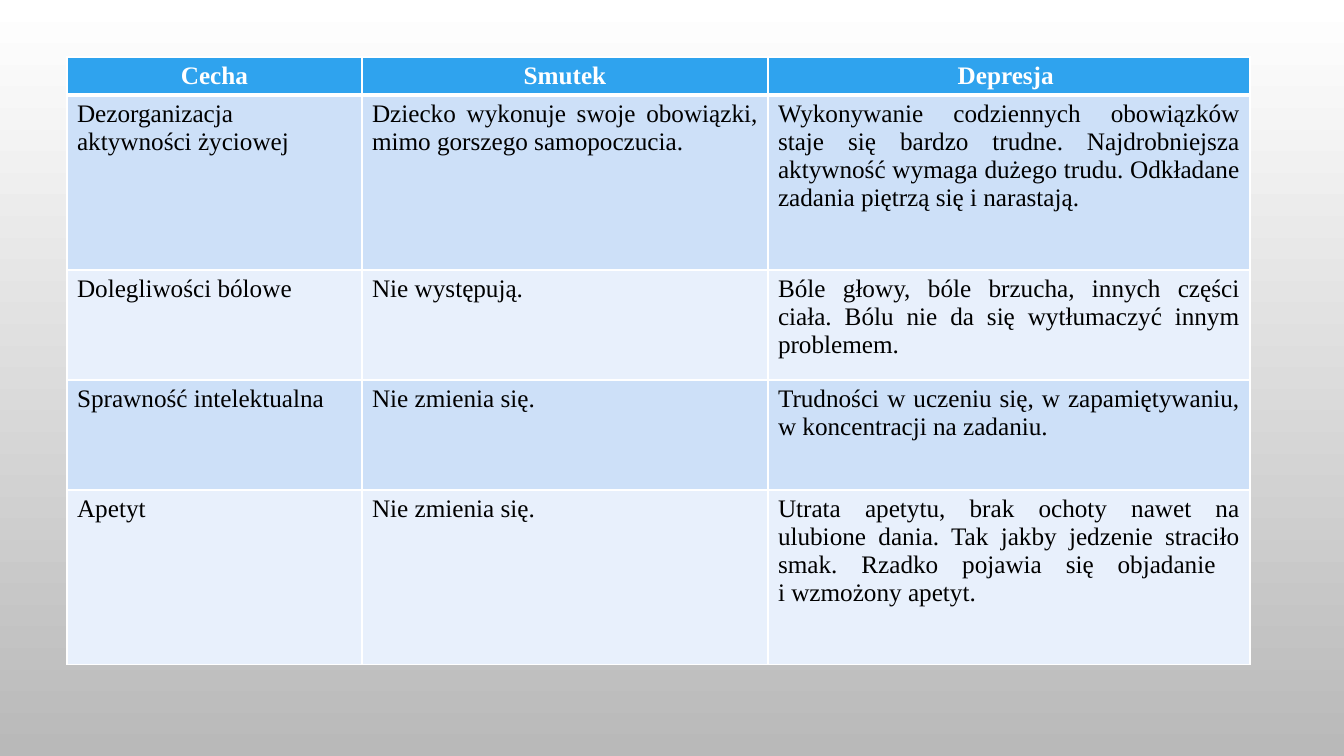
from lxml import etree
from pptx import Presentation
from pptx import util as u
from pptx.dml.color import RGBColor
from pptx.enum import text
from pptx.oxml.ns import qn

COLORS = {
    "white": "FFFFFF",
    "grey": "B9B9B9",
    "header": "2FA3EE",
    "odd": "CDE0F8",
    "even": "E8F0FC",
    "black": "000000",
}

COLUMNS = [295, 406, 482]
HEIGHTS = [37, 175, 110, 110, 175]
ROWS = [
    ["Cecha", "Smutek", "Depresja "],
    ["Dezorganizacja aktywności życiowej",
     "Dziecko wykonuje swoje obowiązki, mimo gorszego samopoczucia.",
     "Wykonywanie codziennych obowiązków staje się bardzo trudne. "
     "Najdrobniejsza aktywność wymaga dużego trudu. "
     "Odkładane zadania piętrzą się i narastają."],
    ["Dolegliwości bólowe ", "Nie występują.",
     "Bóle głowy, bóle brzucha, innych części ciała. "
     "Bólu nie da się wytłumaczyć innym problemem."],
    ["Sprawność intelektualna ", "Nie zmienia się.",
     "Trudności w uczeniu się, w zapamiętywaniu, w koncentracji na zadaniu. "],
    ["Apetyt", "Nie zmienia się.",
     "Utrata apetytu, brak ochoty nawet na ulubione dania. "
     "Tak jakby jedzenie straciło smak. "
     "Rzadko pojawia się objadanie \ni wzmożony apetyt."],
]


def px(n):
    return u.Emu(round(n * 914400 / 100.8))


def rgb(name):
    return RGBColor.from_string(COLORS[name])


class Deck:
    font = "Times New Roman"
    size = u.Pt(18)

    def __init__(self, width, height):
        self.prs = Presentation()
        self.prs.slide_width = px(width)
        self.prs.slide_height = px(height)
        self.s = self.prs.slides.add_slide(self.prs.slide_layouts[6])

    def background(self, top, bottom):
        fill = self.s.background.fill
        fill.gradient()
        fill.gradient_angle = 270
        for stop, name, position in zip(fill.gradient_stops, (top, bottom), (0, 1)):
            stop.color.rgb = rgb(name)
            stop.position = position

    def table(self, left, top, columns, heights, rows):
        frame = self.s.shapes.add_table(len(rows), len(columns), px(left), px(top),
                                        px(sum(columns)), px(sum(heights)))
        table = frame.table
        for column, width in zip(table.columns, columns):
            column.width = px(width)
        for i, (row, height) in enumerate(zip(table.rows, heights)):
            row.height = px(height)
            for cell, words in zip(row.cells, rows[i]):
                self.cell(cell, words, i)

    def cell(self, cell, words, row):
        header = row == 0
        cell.fill.solid()
        cell.fill.fore_color.rgb = rgb("header" if header else "odd" if row % 2 else "even")
        self.borders(cell, top=3 if row == 1 else 1, bottom=3 if header else 1)
        p = cell.text_frame.paragraphs[0]
        p.alignment = text.PP_ALIGN.CENTER if header else text.PP_ALIGN.JUSTIFY
        for i, line in enumerate(words.split("\n")):
            if i:
                p.add_line_break()
            r = p.add_run()
            r.text = line
            r.font.name = self.font
            r.font.size = self.size
            r.font.bold = header
            r.font.color.rgb = rgb("white" if header else "black")

    def borders(self, cell, top, bottom):
        tc_pr = cell._tc.get_or_add_tcPr()
        sides = {"lnL": 1, "lnR": 1, "lnT": top, "lnB": bottom}
        for i, (side, points) in enumerate(sides.items()):
            line = etree.Element(qn("a:" + side), w=str(u.Pt(points)))
            fill = etree.SubElement(line, qn("a:solidFill"))
            etree.SubElement(fill, qn("a:srgbClr"), val=COLORS["white"])
            tc_pr.insert(i, line)


def main():
    deck = Deck(1344, 756)
    deck.background("white", "grey")
    deck.table(67, 57, COLUMNS, HEIGHTS, ROWS)
    deck.prs.save("out.pptx")


if __name__ == "__main__":
    main()
